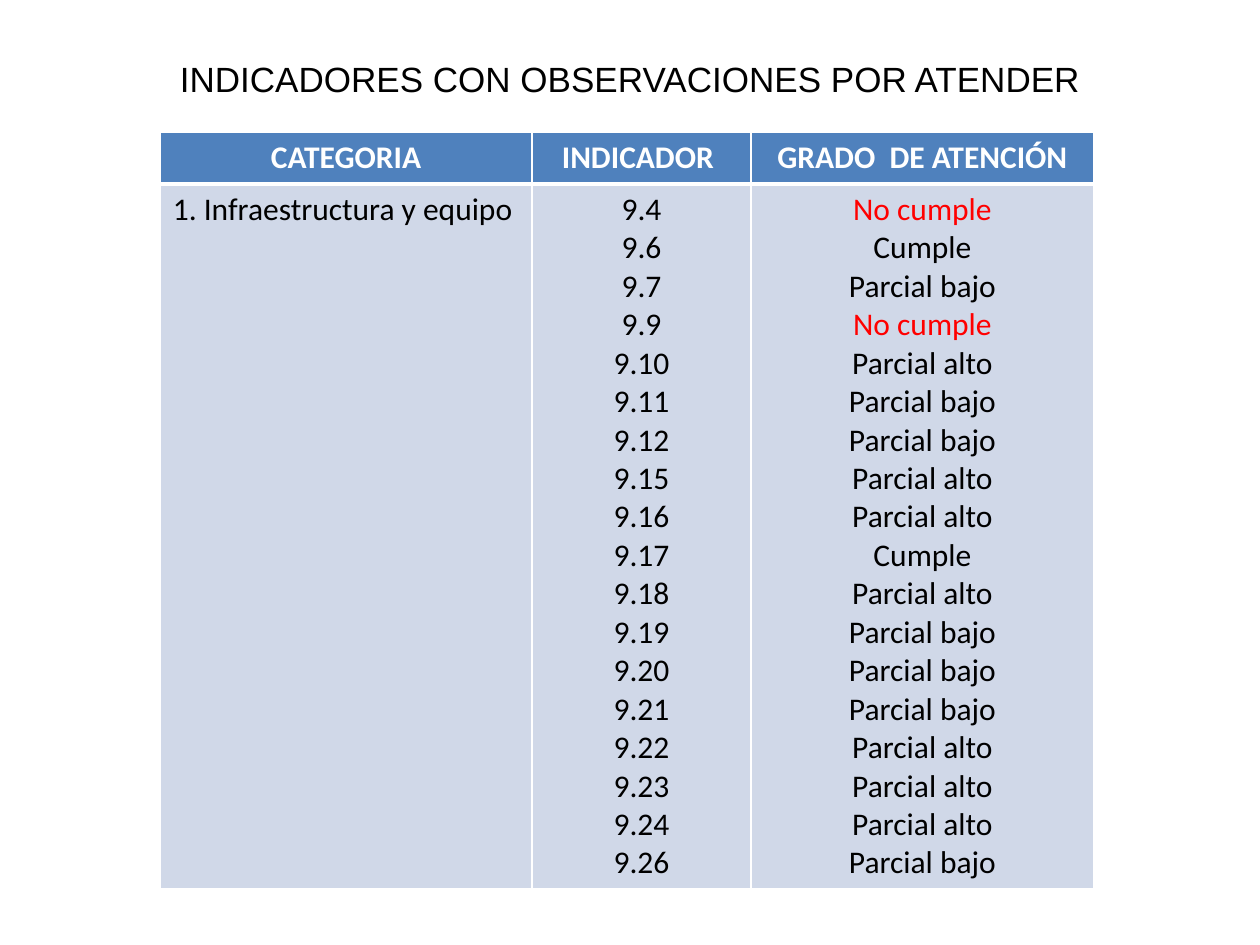
from dataclasses import dataclass

from lxml import etree
from pptx import Presentation
from pptx.dml.color import RGBColor
from pptx.enum.text import MSO_AUTO_SIZE, PP_ALIGN
from pptx.oxml.ns import qn
from pptx.util import Cm, Pt

LEFT, CENTER = PP_ALIGN.LEFT, PP_ALIGN.CENTER
GROW = MSO_AUTO_SIZE.SHAPE_TO_FIT_TEXT


@dataclass(frozen=True)
class Theme:
    head: str = "4F81BD"
    body: str = "D0D8E8"
    white: str = "FFFFFF"
    black: str = "000000"
    alert: str = "FF0000"
    title_font: str = "Arial"
    table_font: str = "Calibri"
    title_size: int = 20
    table_size: int = 18
    thin: int = 1
    thick: int = 3


THEME = Theme()

HEADS = ["CATEGORIA", "INDICADOR ", "GRADO  DE ATENCIÓN"]
TOPIC = "1. Infraestructura y equipo"
NO, YES, LOW, HIGH = "No cumple", "Cumple", "Parcial bajo", "Parcial alto"
GRADES = {
    "9.4": NO, "9.6": YES, "9.7": LOW, "9.9": NO, "9.10": HIGH, "9.11": LOW,
    "9.12": LOW, "9.15": HIGH, "9.16": HIGH, "9.17": YES, "9.18": HIGH,
    "9.19": LOW, "9.20": LOW, "9.21": LOW, "9.22": HIGH, "9.23": HIGH,
    "9.24": HIGH, "9.26": LOW,
}


def write(frame, lines, font, size, color, align=CENTER, bold=False):
    """Write one paragraph per line; unmet grades take the alert colour."""
    for i, line in enumerate(lines):
        para = frame.paragraphs[0] if i == 0 else frame.add_paragraph()
        para.alignment = align
        run = para.add_run()
        run.text = line
        run.font.name = font
        run.font.size = Pt(size)
        run.font.bold = bold
        tint = THEME.alert if line == NO else color
        run.font.color.rgb = RGBColor.from_string(tint)


def edge(cell, base):
    """Draw the four white cell borders, the lower one of the given width."""
    props = cell._tc.get_or_add_tcPr()
    widths = {"L": THEME.thin, "R": THEME.thin, "T": THEME.thin, "B": base}
    for i, (side, width) in enumerate(widths.items()):
        line = etree.Element(qn(f"a:ln{side}"), w=str(Pt(width)))
        fill = etree.SubElement(line, qn("a:solidFill"))
        etree.SubElement(fill, qn("a:srgbClr"), val=THEME.white)
        props.insert(i, line)


def paint(cell, fill, base):
    cell.fill.solid()
    cell.fill.fore_color.rgb = RGBColor.from_string(fill)
    edge(cell, base)


def add_title(slide, x, y, w, h):
    frame = slide.shapes.add_textbox(x, y, w, h).text_frame
    frame.word_wrap = True
    frame.auto_size = GROW
    write(frame, ["INDICADORES CON OBSERVACIONES POR ATENDER"],
          THEME.title_font, THEME.title_size, THEME.black)


def add_grades(slide, x, y, w, h):
    table = slide.shapes.add_table(2, len(HEADS), x, y, w, h).table

    # Column shares and row heights
    shares = [2.95, 1.74, 2.72]
    for col, share in zip(table.columns, shares):
        col.width = int(w * share / sum(shares))
    top = Cm(1.04)
    table.rows[0].height = top
    table.rows[1].height = h - top

    # Header row
    for i, head in enumerate(HEADS):
        cell = table.cell(0, i)
        paint(cell, THEME.head, THEME.thick)
        write(cell.text_frame, [head], THEME.table_font, THEME.table_size,
              THEME.white, bold=True)

    # Body row: topic, indicators, grades
    body = [([TOPIC], LEFT), (GRADES.keys(), CENTER), (GRADES.values(), CENTER)]
    for i, (lines, align) in enumerate(body):
        cell = table.cell(1, i)
        paint(cell, THEME.body, THEME.thin)
        write(cell.text_frame, lines, THEME.table_font, THEME.table_size,
              THEME.black, align)


def main():
    deck = Presentation()
    deck.slide_width, deck.slide_height = Cm(25.4), Cm(19.05)
    slide = deck.slides.add_slide(deck.slide_layouts[6])
    add_grades(slide, Cm(3.23), Cm(2.67), Cm(18.82), Cm(15.01))
    add_title(slide, 0, Cm(1.04), deck.slide_width, Cm(1.12))
    deck.save("out.pptx")


if __name__ == "__main__":
    main()
